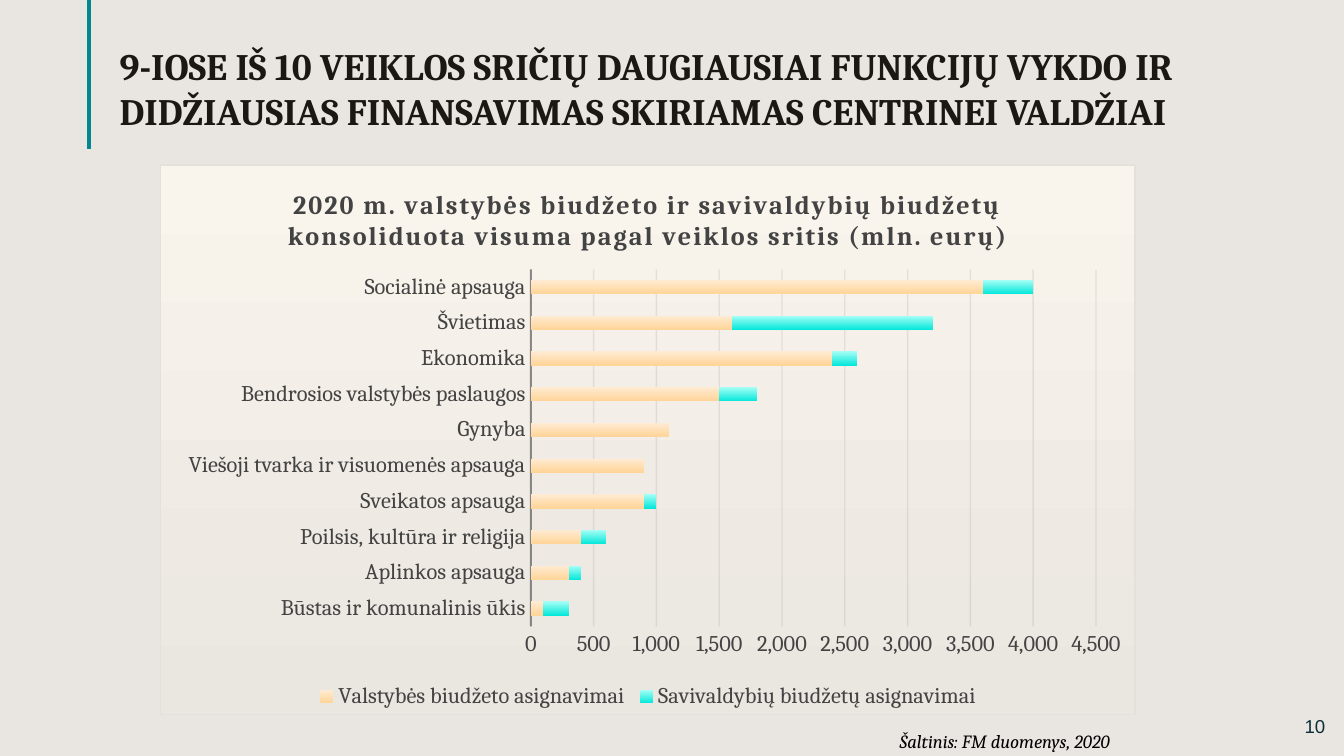
from lxml import etree
from pptx import Presentation
from pptx.chart.data import CategoryChartData
from pptx.dml.color import RGBColor
from pptx.dml.fill import FillFormat
from pptx.dml.line import LineFormat
from pptx.enum.chart import XL_CHART_TYPE, XL_LEGEND_POSITION, XL_TICK_MARK
from pptx.enum.shapes import MSO_CONNECTOR
from pptx.enum.text import MSO_ANCHOR, PP_ALIGN
from pptx.oxml import parse_xml
from pptx.oxml.ns import nsdecls, qn
from pptx.util import Pt

BAR_STACKED = XL_CHART_TYPE.BAR_STACKED
BOTTOM = XL_LEGEND_POSITION.BOTTOM
NO_TICK = XL_TICK_MARK.NONE
STRAIGHT = MSO_CONNECTOR.STRAIGHT
TOP, MIDDLE = MSO_ANCHOR.TOP, MSO_ANCHOR.MIDDLE
LEFT, RIGHT = PP_ALIGN.LEFT, PP_ALIGN.RIGHT

THEME = {
    "background": "E9E6E1",
    "accent": "018790",
    "axis": "404040",
    "border": "E4E1DC",
    "panel": ("EAE6E0", "F9F4EC"),
    "series": (("FFD497", "FFEBD3"), ("03E7DA", "A6FFF6")),
    "heading": {"name": "Cambria", "size": 20, "bold": True, "color": "1A1813"},
    "chart_title": {"name": "Cambria", "size": 14, "bold": True, "color": "434343"},
    "chart_text": {"name": "Cambria", "size": 12, "bold": False, "color": "434343"},
    "source": {"name": "Cambria", "size": 10, "italic": True, "color": "000000"},
    "number": {"name": "Arial", "size": 10, "color": "0C2E3A"},
}

TEXTS = [
    ("9-IOSE IŠ 10 VEIKLOS SRIČIŲ DAUGIAUSIAI FUNKCIJŲ VYKDO IR "
     "DIDŽIAUSIAS FINANSAVIMAS SKIRIAMAS CENTRINEI VALDŽIAI",
     (57, 19.5, 625, 55.5), "heading", LEFT, TOP),
    ("Šaltinis: FM duomenys, 2020", (407.5, 387.5, 194, 19.5), "source", RIGHT, TOP),
    ("10", (674, 373.5, 43, 31), "number", RIGHT, MIDDLE),
]

CHART_TITLE = ("2020 m. valstybės biudžeto ir savivaldybių biudžetų "
               "konsoliduota visuma pagal veiklos sritis (mln. eurų)")
CHART_BOX = (85.7, 88, 522.7, 295.2)
PLOT_LAYOUT = {"x": 0.38, "y": 0.19, "w": 0.58, "h": 0.65}
SERIES_NAMES = ("Valstybės biudžeto asignavimai", "Savivaldybių biudžetų asignavimai")
BUDGETS = [
    ("Būstas ir komunalinis ūkis", 100, 200),
    ("Aplinkos apsauga", 300, 100),
    ("Poilsis, kultūra ir religija", 400, 200),
    ("Sveikatos apsauga", 900, 100),
    ("Viešoji tvarka ir visuomenės apsauga", 900, 0),
    ("Gynyba", 1100, 0),
    ("Bendrosios valstybės paslaugos", 1500, 300),
    ("Ekonomika", 2400, 200),
    ("Švietimas", 1600, 1600),
    ("Socialinė apsauga", 3600, 400),
]


def set_font(font, style):
    for key, value in THEME[style].items():
        if key == "color":
            font.color.rgb = RGBColor.from_string(value)
        else:
            setattr(font, key, Pt(value) if key == "size" else value)


def set_line(line, color, width, opacity=100):
    line.color.rgb = RGBColor.from_string(color)
    line.width = Pt(width)
    if opacity < 100:
        clr = line.fill._xPr.find(".//" + qn("a:srgbClr"))
        etree.SubElement(clr, qn("a:alpha"), val=str(opacity * 1000))


def set_gradient(fill, colors):
    fill.gradient()
    fill.gradient_angle = 90
    for stop, color in zip(fill.gradient_stops, colors):
        stop.color.rgb = RGBColor.from_string(color)


def add_text(slide, text, box, style, align, anchor):
    tf = slide.shapes.add_textbox(*map(Pt, box)).text_frame
    tf.word_wrap = True
    tf.vertical_anchor = anchor
    p = tf.paragraphs[0]
    p.alignment = align
    r = p.add_run()
    r.text = text
    set_font(r.font, style)


def add_accent(slide):
    line = slide.shapes.add_connector(STRAIGHT, Pt(47.5), Pt(0), Pt(47.5), Pt(80))
    set_line(line.line, THEME["accent"], 2.25)
    etree.SubElement(line._element.spPr, qn("a:effectLst"))


def style_panel(chart):
    sp_pr = parse_xml(f"<c:spPr {nsdecls('c', 'a')}/>")
    chart._chartSpace.find(qn("c:chart")).addnext(sp_pr)
    set_gradient(FillFormat.from_fill_parent(sp_pr), THEME["panel"])
    set_line(LineFormat(sp_pr), THEME["border"], 0.75)


def place_plot(chart):
    area = chart._chartSpace.find(".//" + qn("c:plotArea"))
    for old in area.findall(qn("c:layout")):
        area.remove(old)
    layout = etree.Element(qn("c:layout"))
    manual = etree.SubElement(layout, qn("c:manualLayout"))
    settings = {"layoutTarget": "inner", "xMode": "edge", "yMode": "edge", **PLOT_LAYOUT}
    for tag, value in settings.items():
        etree.SubElement(manual, qn("c:" + tag), val=str(value))
    area.insert(0, layout)


def add_budget_chart(slide):
    data = CategoryChartData(number_format="#,##0")
    names, *columns = zip(*BUDGETS)
    data.categories = names
    for name, values in zip(SERIES_NAMES, columns):
        data.add_series(name, values)
    chart = slide.shapes.add_chart(BAR_STACKED, *map(Pt, CHART_BOX), data).chart
    set_font(chart.font, "chart_text")
    style_panel(chart)
    place_plot(chart)

    chart.has_title = True
    r = chart.chart_title.text_frame.paragraphs[0].add_run()
    r.text = CHART_TITLE
    set_font(r.font, "chart_title")
    r.font._element.set("spc", "100")
    chart.chart_title.include_in_layout = False

    chart.has_legend = True
    chart.legend.position = BOTTOM
    chart.legend.include_in_layout = False
    set_font(chart.legend.font, "chart_text")

    plot = chart.plots[0]
    plot.gap_width, plot.overlap = 150, 100
    plot.vary_by_categories = False
    for series, colors in zip(plot.series, THEME["series"]):
        set_gradient(series.format.fill, colors)

    for axis in (chart.category_axis, chart.value_axis):
        axis.major_tick_mark = axis.minor_tick_mark = NO_TICK
        set_font(axis.tick_labels.font, "chart_text")
    set_line(chart.category_axis.format.line, THEME["axis"], 1, 54)

    axis = chart.value_axis
    axis.minimum_scale, axis.maximum_scale, axis.major_unit = 0, 4500, 500
    axis.format.line.fill.background()
    axis.tick_labels.number_format = "#,##0"
    axis.tick_labels.number_format_is_linked = False
    set_line(axis.major_gridlines.format.line, THEME["axis"], 0.75, 10)


def main():
    prs = Presentation()
    prs.slide_width, prs.slide_height = Pt(720), Pt(405)
    s = prs.slides.add_slide(prs.slide_layouts[6])
    s.background.fill.solid()
    s.background.fill.fore_color.rgb = RGBColor.from_string(THEME["background"])
    add_accent(s)
    add_budget_chart(s)
    for item in TEXTS:
        add_text(s, *item)
    prs.save("out.pptx")


if __name__ == "__main__":
    main()
